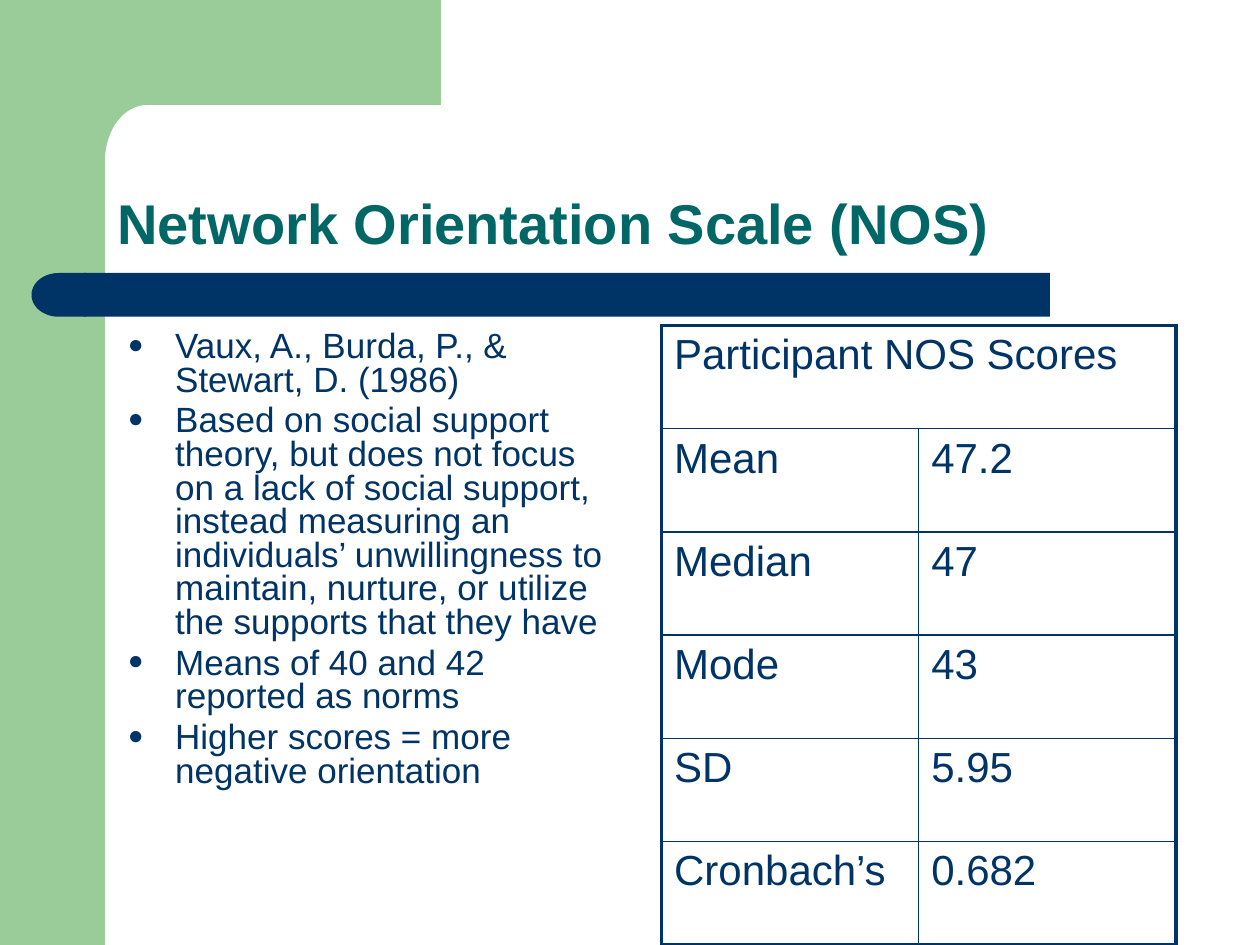
from dataclasses import dataclass
from math import cos, pi, sin

from lxml import etree
from pptx import Presentation
from pptx.dml.color import RGBColor
from pptx.enum.shapes import MSO_SHAPE
from pptx.enum.text import MSO_ANCHOR
from pptx.oxml.ns import qn
from pptx.util import Pt

RECT = MSO_SHAPE.RECTANGLE
DELAY = MSO_SHAPE.FLOWCHART_DELAY
BOTTOM = MSO_ANCHOR.BOTTOM


@dataclass(frozen=True)
class Theme:
    green: str = "99CC99"
    navy: str = "003366"
    teal: str = "006666"
    font: str = "Arial"
    title: int = 32
    body: int = 20
    cell: int = 24
    thin: float = 1
    thick: float = 2.25


THEME = Theme()

POINTS = [
    "Vaux, A., Burda, P., & Stewart, D. (1986)",
    "Based on social support theory, but does not focus on a lack of social "
    "support, instead measuring an individuals’ unwillingness to maintain, "
    "nurture, or utilize the supports that they have",
    "Means of 40 and 42 reported as norms",
    "Higher scores = more negative orientation",
]
HEAD = "Participant NOS Scores"
SCORES = [
    ("Mean", "47.2"),
    ("Median", "47"),
    ("Mode", "43"),
    ("SD", "5.95"),
    ("Cronbach’s", "0.682"),
]


def paint(shape, color):
    shape.shadow.inherit = False
    shape.fill.solid()
    shape.fill.fore_color.rgb = RGBColor.from_string(color)
    shape.line.fill.background()


def add_block(slide, kind, color, x, y, w, h):
    shape = slide.shapes.add_shape(kind, Pt(x), Pt(y), Pt(w), Pt(h))
    paint(shape, color)
    return shape


def style(para, size, color, bold=False):
    for run in para.runs:
        font = run.font
        font.name, font.size, font.bold = THEME.font, Pt(size), bold
        font.color.rgb = RGBColor.from_string(color)


def add_frame(slide, x, y, w, h):
    """Green side band and top block, joined by a rounded inner corner."""
    band, top, round_x, round_y = 60, 60, 24, 32
    add_block(slide, RECT, THEME.green, x, y, band, h)
    left, low = x + band, y + top
    turns = [pi / 2 * i / 16 for i in range(17)]
    curve = [
        (left + round_x * (1 - sin(t)), low + round_y * (1 - cos(t)))
        for t in turns
    ]
    edge = [(x + w, low), *curve, (x + 36, low + round_y), (x + 36, y)]
    pen = slide.shapes.build_freeform(Pt(x + w), Pt(y))
    pen.add_line_segments([(Pt(a), Pt(b)) for a, b in edge], close=True)
    paint(pen.convert_to_shape(), THEME.green)


def add_bar(slide, x, y, w, h):
    """Navy rule with a round left end."""
    cap = 30
    add_block(slide, RECT, THEME.navy, x + cap, y, w - cap, h)
    end = add_block(slide, DELAY, THEME.navy, x, y, cap + 1, h)
    end.rotation = 180


def add_title(slide, text, x, y, w, h):
    frame = slide.shapes.add_textbox(Pt(x), Pt(y), Pt(w), Pt(h)).text_frame
    frame.word_wrap = True
    frame.vertical_anchor = BOTTOM
    frame.text = text
    para = frame.paragraphs[0]
    para.line_spacing = 0.9
    style(para, THEME.title, THEME.teal, bold=True)


def add_bullet(para, indent):
    props = para._p.get_or_add_pPr()
    props.set("marL", str(Pt(indent)))
    props.set("indent", str(-Pt(indent)))
    color = etree.SubElement(props, qn("a:buClr"))
    etree.SubElement(color, qn("a:srgbClr"), val=THEME.navy)
    etree.SubElement(props, qn("a:buSzPct"), val="75000")
    etree.SubElement(props, qn("a:buFont"), typeface=THEME.font)
    etree.SubElement(props, qn("a:buChar"), char="●")


def add_list(slide, items, x, y, w, h):
    frame = slide.shapes.add_textbox(Pt(x), Pt(y), Pt(w), Pt(h)).text_frame
    frame.word_wrap = True
    frame.text = "\n".join(items)
    for para in frame.paragraphs:
        para.line_spacing = 0.8
        para.space_before = Pt(THEME.body * 0.2)
        add_bullet(para, 27)
        style(para, THEME.body, THEME.navy)


def add_edge(cell, side, width):
    props = cell._tc.get_or_add_tcPr()
    line = etree.SubElement(props, qn("a:ln" + side), w=str(Pt(width)))
    fill = etree.SubElement(line, qn("a:solidFill"))
    etree.SubElement(fill, qn("a:srgbClr"), val=THEME.navy)


def add_scores(slide, x, y, w, h):
    """Score table with a merged head row and a thick outer border."""
    rows, cols = len(SCORES) + 1, 2
    table = slide.shapes.add_table(
        rows, cols, Pt(x), Pt(y), Pt(w), Pt(h)
    ).table
    table.first_row = table.horz_banding = False
    for row in table.rows:
        row.height = Pt(h / rows)
    for r, texts in enumerate([(HEAD, ""), *SCORES]):
        for c, text in enumerate(texts):
            cell = table.cell(r, c)
            outer = {
                "L": c == 0,
                "R": c == cols - 1 or r == 0,
                "T": r == 0,
                "B": r == rows - 1,
            }
            for side, thick in outer.items():
                add_edge(cell, side, THEME.thick if thick else THEME.thin)
            cell.fill.background()
            if text:
                cell.text_frame.text = text
                para = cell.text_frame.paragraphs[0]
                para.space_before = Pt(THEME.cell * 0.2)
                style(para, THEME.cell, THEME.navy)
    table.cell(0, 0).merge(table.cell(0, cols - 1))


def main():
    deck = Presentation()
    deck.slide_width, deck.slide_height = Pt(720), Pt(540)
    slide = deck.slides.add_slide(deck.slide_layouts[6])
    add_frame(slide, 0, 0, 252, 540)
    add_bar(slide, 18, 156, 582, 25)
    add_title(slide, "Network Orientation Scale (NOS)", 60, 60, 624, 90)
    add_list(slide, POINTS, 66, 186, 297.5, 293)
    add_scores(slide, 378, 186, 294, 354)
    deck.save("out.pptx")


if __name__ == "__main__":
    main()
